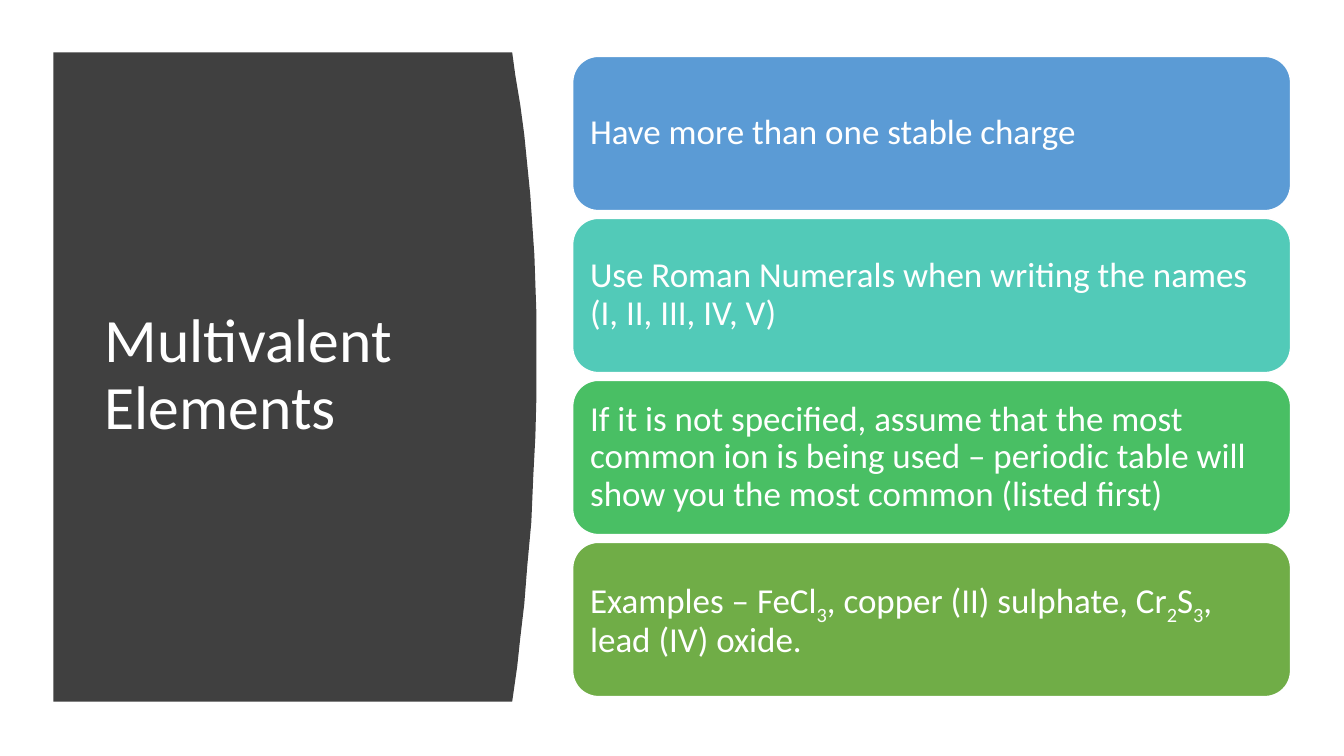
from pptx import Presentation
from pptx.dml.color import RGBColor
from pptx.enum.shapes import MSO_SHAPE
from pptx.enum.text import MSO_ANCHOR, PP_ALIGN
from pptx.util import Inches, Pt

ROUND = MSO_SHAPE.ROUNDED_RECTANGLE
MIDDLE = MSO_ANCHOR.MIDDLE
LEFT = PP_ALIGN.LEFT

COLORS = {
    "white": "FFFFFF",
    "dark": "404040",
    "blue": "5B9BD5",
    "teal": "52CAB8",
    "green": "49BF64",
    "olive": "70AD47",
}


def color(name):
    return RGBColor.from_string(COLORS[name])


def write(shape, text, size=25, inset=0.1):
    """Fill the shape with text; parts between underscores become subscripts."""
    frame = shape.text_frame
    frame.word_wrap = True
    frame.vertical_anchor = MIDDLE
    frame.margin_left = frame.margin_right = Inches(0.1)
    frame.margin_top = frame.margin_bottom = Inches(inset)
    para = frame.paragraphs[0]
    para.alignment = LEFT
    para.line_spacing = 0.9
    for i, part in enumerate(text.split("_")):
        run = para.add_run()
        run.text = part
        run.font.name = "Calibri"
        run.font.size = Pt(size)
        run.font.color.rgb = color("white")
        if i % 2:
            run._r.get_or_add_rPr().set("baseline", "-25000")


prs = Presentation()
prs.slide_width = Inches(13.33)
prs.slide_height = Inches(7.5)
slide = prs.slides.add_slide(prs.slide_layouts[6])
shapes = slide.shapes

# Dark panel with a bowed right edge
edge = [
    (5.08, 0.52), (5.11, 0.74), (5.16, 1.04), (5.2, 1.34), (5.23, 1.64),
    (5.26, 1.94), (5.28, 2.24), (5.3, 2.53), (5.31, 2.82), (5.32, 3.11),
    (5.32, 3.94), (5.31, 4.33), (5.29, 4.71), (5.27, 5.18), (5.23, 5.61),
    (5.2, 5.99), (5.16, 6.33), (5.13, 6.61), (5.1, 6.82), (5.08, 6.96),
]
path = [(Inches(x), Inches(y)) for x, y in edge + [(0.53, 6.96)]]
pen = shapes.build_freeform(Inches(0.53), Inches(0.52))
pen.add_line_segments(path, close=True)
panel = pen.convert_to_shape()
panel.shadow.inherit = False
panel.fill.solid()
panel.fill.fore_color.rgb = color("dark")
panel.line.fill.background()

title = shapes.add_textbox(Inches(0.94), Inches(1.11), Inches(3.74), Inches(5.24))
write(title, "Multivalent Elements", size=44, inset=0.05)

# Stack of fact cards
facts = [
    ("blue", "Have more than one stable charge"),
    ("teal", "Use Roman Numerals when writing the names (I, II, III, IV, V)"),
    ("green", "If it is not specified, assume that the most common ion is being used "
              "– periodic table will show you the most common (listed first)"),
    ("olive", "Examples – FeCl_3_, copper (II) sulphate, Cr_2_S_3_, lead (IV) oxide."),
]
top, step = 0.56, 1.607
for i, (tint, text) in enumerate(facts):
    card = shapes.add_shape(
        ROUND, Inches(5.68), Inches(top + i * step), Inches(7.12), Inches(1.53))
    card.shadow.inherit = False
    card.fill.solid()
    card.fill.fore_color.rgb = color(tint)
    card.line.color.rgb = color("white")
    card.line.width = Pt(1)
    write(card, text)

prs.save("out.pptx")
